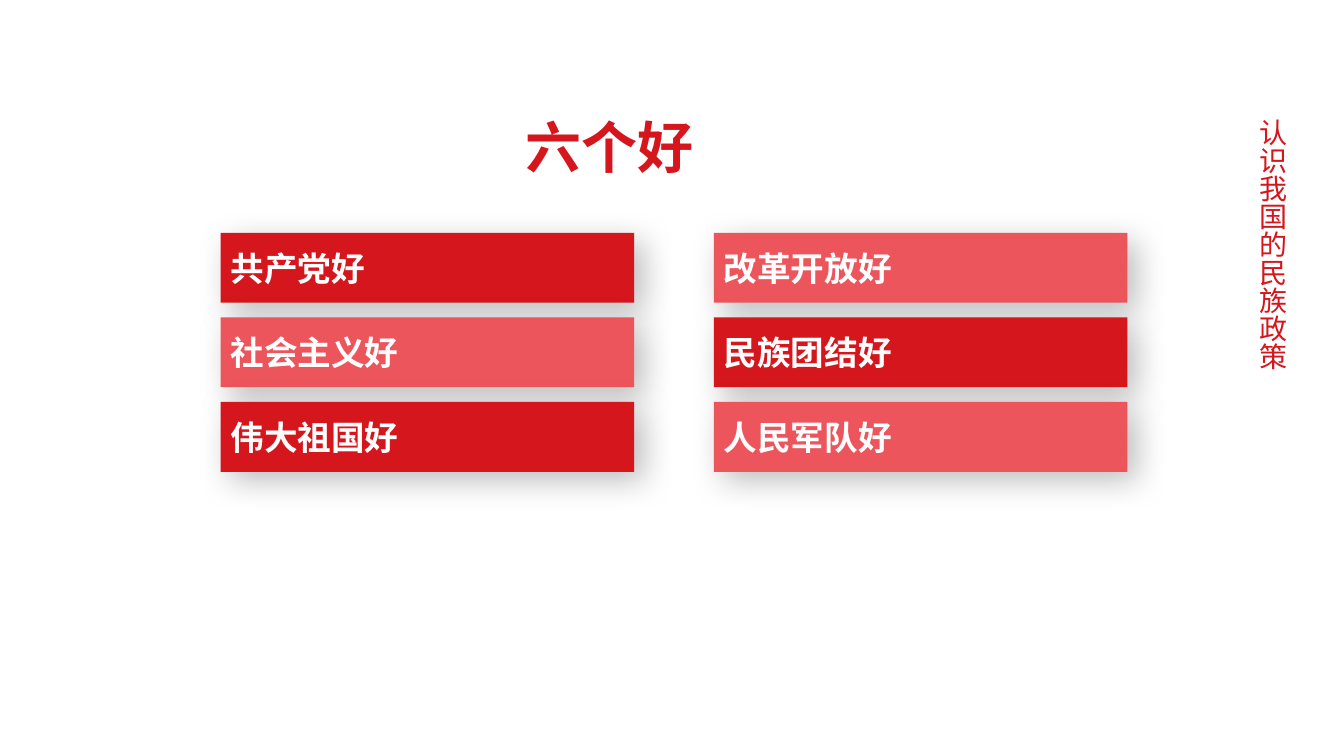
import pptx
import pptx.util
import pptx.dml.color
import pptx.enum.shapes
import pptx.enum.text
import pptx.oxml
import pptx.oxml.ns
from pptx.util import Cm

RED = pptx.dml.color.RGBColor(0xD5, 0x16, 0x1D)
PINK = pptx.dml.color.RGBColor(0xED, 0x55, 0x5C)
WHITE = pptx.dml.color.RGBColor(0xFF, 0xFF, 0xFF)
FONT = "Noto Sans CJK SC"
ANCHOR = pptx.enum.text.MSO_ANCHOR

SHADOW = (
    f'<a:effectLst {pptx.oxml.ns.nsdecls("a")}>'
    f'<a:outerShdw blurRad="{pptx.util.Pt(23)}" dist="{pptx.util.Pt(9)}"'
    ' dir="2700000" algn="tl" rotWithShape="0">'
    '<a:srgbClr val="000000"><a:alpha val="25000"/></a:srgbClr>'
    '</a:outerShdw></a:effectLst>'
)


def write(shape, text, size, color, bold, anchor):
    frame = shape.text_frame
    frame.word_wrap = True
    frame.vertical_anchor = anchor
    para = frame.paragraphs[0]
    para.alignment = pptx.enum.text.PP_ALIGN.JUSTIFY
    run = para.add_run()
    run.text = text
    run.font.size = pptx.util.Pt(size)
    run.font.bold = bold
    run.font.color.rgb = color
    run.font.name = FONT
    east = pptx.oxml.parse_xml(
        f'<a:ea {pptx.oxml.ns.nsdecls("a")} typeface="{FONT}"/>')
    run.font._element.find(pptx.oxml.ns.qn("a:latin")).addnext(east)


deck = pptx.Presentation()
deck.slide_width = Cm(33.87)
deck.slide_height = Cm(19.05)
slide = deck.slides.add_slide(deck.slide_layouts[5])

# Title
title = slide.shapes.title
title.left, title.top = Cm(13), Cm(2.72)
title.width, title.height = Cm(7.87), Cm(1.96)
write(title, "六个好", 40, RED, True, ANCHOR.TOP)
title.text_frame.auto_size = pptx.enum.text.MSO_AUTO_SIZE.SHAPE_TO_FIT_TEXT

# Two columns of bars in alternating colours
columns = [
    ["共产党好", "社会主义好", "伟大祖国好"],
    ["改革开放好", "民族团结好", "人民军队好"],
]
for col, labels in enumerate(columns):
    for row, label in enumerate(labels):
        bar = slide.shapes.add_shape(
            pptx.enum.shapes.MSO_SHAPE.RECTANGLE,
            Cm(5.56 + 12.43 * col), Cm(5.87 + 2.13 * row),
            Cm(10.42), Cm(1.76))
        bar.fill.solid()
        bar.fill.fore_color.rgb = PINK if (col + row) % 2 else RED
        bar.line.fill.background()
        bar._element.spPr.append(pptx.oxml.parse_xml(SHADOW))
        write(bar, label, 24, WHITE, True, ANCHOR.MIDDLE)

# Vertical section name
side = slide.shapes.add_textbox(Cm(31.55), Cm(2.74), Cm(1.45), Cm(10.82))
write(side, "认识我国的民族政策", 20, RED, False, ANCHOR.MIDDLE)
side.text_frame.paragraphs[0].line_spacing = 1.5
side.text_frame._txBody.bodyPr.set("vert", "eaVert")

deck.save("out.pptx")
